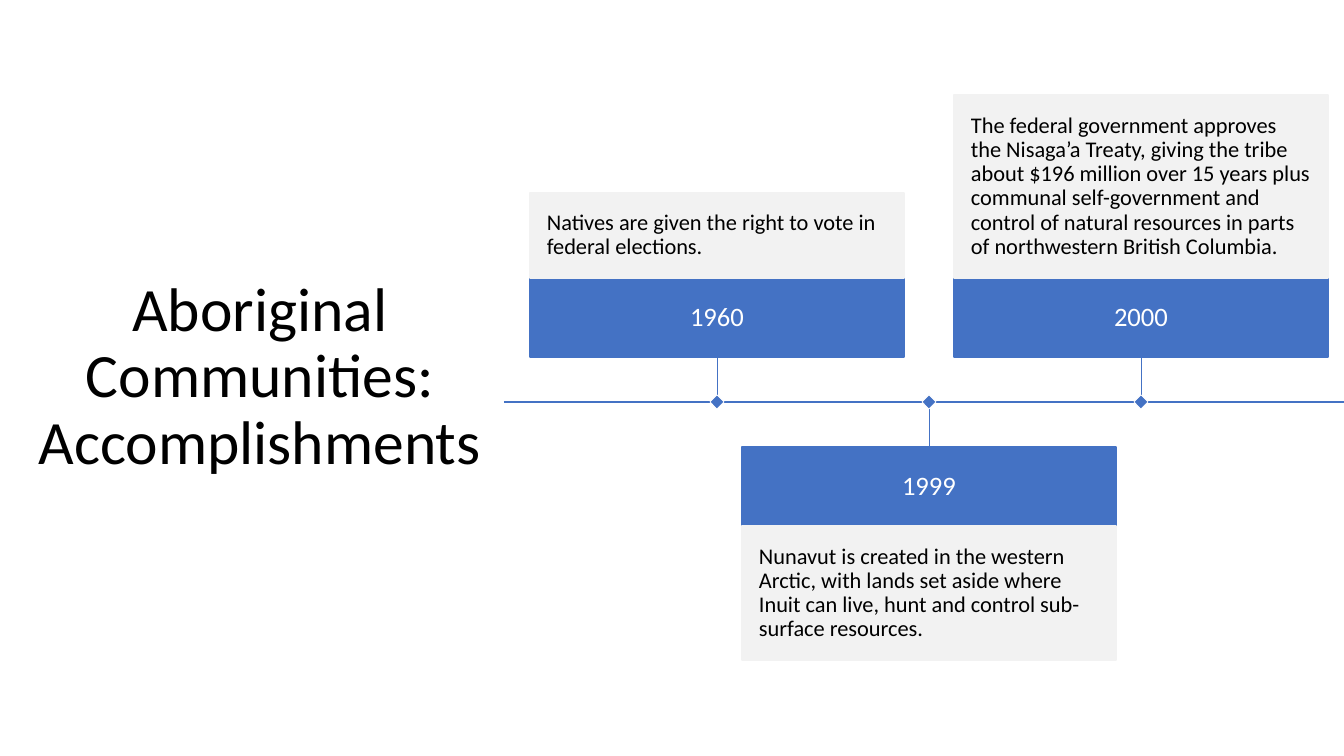
from lxml import etree
from pptx import Presentation
from pptx.dml.color import RGBColor
from pptx.enum.shapes import MSO_CONNECTOR, MSO_SHAPE
from pptx.enum.text import MSO_ANCHOR, PP_ALIGN
from pptx.oxml.ns import qn
from pptx.util import Emu, Pt

TITLE = "Aboriginal Communities: Accomplishments"
EVENTS = [
    ("1960", "Natives are given the right to vote in federal elections.", 85),
    ("1999", "Nunavut is created in the western Arctic, with lands set aside where "
             "Inuit can live, hunt and control sub-surface resources.", 134),
    ("2000", "The federal government approves the Nisaga’a Treaty, giving the tribe "
             "about $196 million over 15 years plus communal self-government and "
             "control of natural resources in parts of northwestern British Columbia.", 183),
]
FONT = "Calibri"
BLUE, GRAY, WHITE, BLACK = "4472C4", "F2F2F2", "FFFFFF", "000000"
SLIDE_WIDTH, SLIDE_HEIGHT = 1344, 756
AXIS_LEFT, AXIS_RIGHT, AXIS_Y = 504, 1354, 402
FIRST_CENTER, STEP = 717, 212
CARD_WIDTH, YEAR_HEIGHT, STEM = 374, 79, 45
MARKER = 10


def px(length):
    return Emu(round(length * 914400 / 100.8))


def color(value):
    return RGBColor.from_string(value)


def write(shape, text, size, ink, align, inset):
    frame = shape.text_frame
    frame.word_wrap = True
    frame.vertical_anchor = MSO_ANCHOR.MIDDLE
    frame.margin_left = frame.margin_right = px(inset)
    frame.margin_top = frame.margin_bottom = px(inset)
    para = frame.paragraphs[0]
    para.text = text
    para.alignment = align
    para.line_spacing = 0.9
    para.font.name = FONT
    para.font.size = Pt(size)
    para.font.color.rgb = color(ink)


def add_box(page, left, top, width, height, fill, edge, weight):
    box = page.shapes.add_shape(
        MSO_SHAPE.RECTANGLE, px(left), px(top), px(width), px(height))
    box.shadow.inherit = False
    box.fill.solid()
    box.fill.fore_color.rgb = color(fill)
    box.line.color.rgb = color(edge)
    box.line.width = Pt(weight)
    return box


def add_line(page, x1, y1, x2, y2, weight):
    line = page.shapes.add_connector(
        MSO_CONNECTOR.STRAIGHT, px(x1), px(y1), px(x2), px(y2))
    line.line.color.rgb = color(BLUE)
    line.line.width = Pt(weight)
    etree.SubElement(line._element.spPr, qn("a:effectLst"))


def add_event(page, index, year, story, story_height):
    center = FIRST_CENTER + index * STEP
    left = center - CARD_WIDTH / 2
    if index % 2 == 0:
        stem_end = AXIS_Y - STEM
        year_top = stem_end - YEAR_HEIGHT
        story_top = year_top - story_height
    else:
        stem_end = year_top = AXIS_Y + STEM
        story_top = year_top + YEAR_HEIGHT
    year_box = add_box(page, left, year_top, CARD_WIDTH, YEAR_HEIGHT, BLUE, BLUE, 1)
    write(year_box, year, 19, WHITE, PP_ALIGN.CENTER, 11)
    story_box = add_box(page, left, story_top, CARD_WIDTH, story_height, GRAY, GRAY, 1)
    write(story_box, story, 16, BLACK, PP_ALIGN.LEFT, 17)
    add_line(page, center, AXIS_Y, center, stem_end, 0.5)
    marker = add_box(page, center - MARKER / 2, AXIS_Y - MARKER / 2,
                     MARKER, MARKER, BLUE, WHITE, 0.5)
    marker.rotation = 45


def main():
    """Build the timeline slide and save it."""
    deck = Presentation()
    deck.slide_width, deck.slide_height = px(SLIDE_WIDTH), px(SLIDE_HEIGHT)
    page = deck.slides.add_slide(deck.slide_layouts[6])
    title = page.shapes.add_textbox(px(16), px(97), px(488), px(562))
    write(title, TITLE, 44, BLACK, PP_ALIGN.CENTER, 10)
    add_line(page, AXIS_LEFT, AXIS_Y, AXIS_RIGHT, AXIS_Y, 1)
    for index, event in enumerate(EVENTS):
        add_event(page, index, *event)
    deck.save("out.pptx")


if __name__ == "__main__":
    main()
